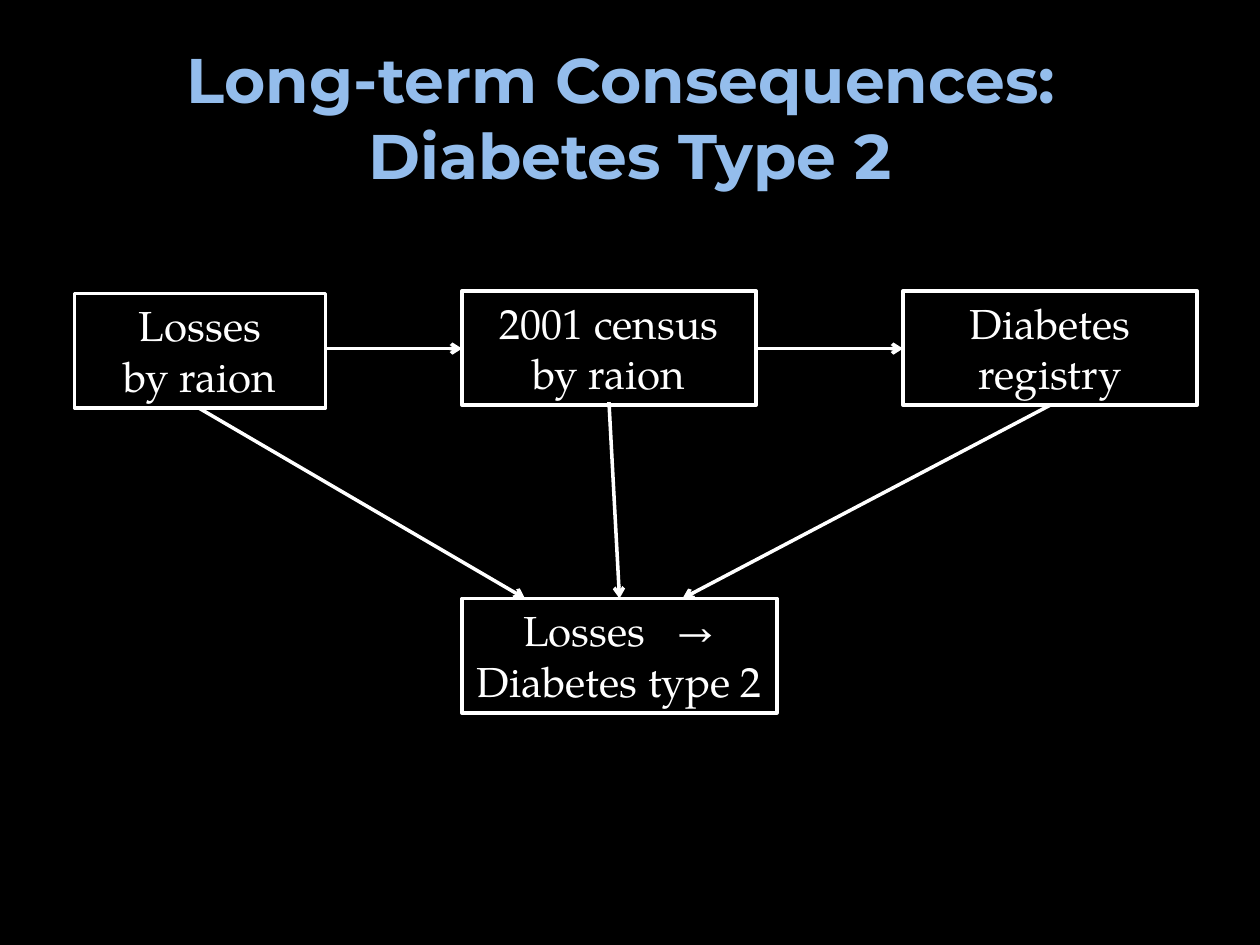
from lxml import etree
from pptx import Presentation
from pptx.dml.color import RGBColor
from pptx.enum.shapes import MSO_CONNECTOR, MSO_SHAPE
from pptx.enum.text import MSO_ANCHOR, PP_ALIGN
from pptx.oxml.ns import qn
from pptx.util import Inches, Pt

RECTANGLE = MSO_SHAPE.RECTANGLE
STRAIGHT = MSO_CONNECTOR.STRAIGHT
CENTER = PP_ALIGN.CENTER
TOP, MIDDLE = MSO_ANCHOR.TOP, MSO_ANCHOR.MIDDLE
TITLE_ONLY = 5
COLUMNS, ROWS = 120, 90
BOX_HEIGHT = 10.9
TOP_ROW, BOTTOM_ROW, ARROW_ROW = 27.7, 57, 33.2
COLORS = {"background": "000000", "title": "94BDEC", "ink": "FFFFFF"}


class DiagramSlide:
    """Draws a titled box-and-arrow diagram on a grid of columns and rows."""

    def __init__(self, deck):
        self.cell_width = deck.slide_width / COLUMNS
        self.cell_height = deck.slide_height / ROWS
        self.page = deck.slides.add_slide(deck.slide_layouts[TITLE_ONLY])
        fill = self.page.background.fill
        fill.solid()
        fill.fore_color.rgb = self.color("background")

    def color(self, name):
        return RGBColor.from_string(COLORS[name])

    def place(self, column, row):
        return round(column * self.cell_width), round(row * self.cell_height)

    def set_text(self, frame, text, font_name, size, color, bold=False):
        frame.text = text
        for paragraph in frame.paragraphs:
            paragraph.alignment = CENTER
            font = paragraph.font
            font.name, font.size, font.bold = font_name, Pt(size), bold
            font.color.rgb = self.color(color)

    def title(self, text, column, row, columns, rows):
        title = self.page.shapes.title
        title.left, title.top = self.place(column, row)
        title.width, title.height = self.place(columns, rows)
        title.text_frame.vertical_anchor = MIDDLE
        self.set_text(title.text_frame, text, "Montserrat", 36, "title", True)

    def box(self, text, column, row, columns):
        box = self.page.shapes.add_shape(
            RECTANGLE, *self.place(column, row), *self.place(columns, BOX_HEIGHT))
        box.shadow.inherit = False
        box.fill.background()
        self.outline(box.line)
        box.text_frame.word_wrap = False
        box.text_frame.vertical_anchor = TOP
        self.set_text(box.text_frame, text, "TeX Gyre Pagella", 24, "ink")

    def arrow(self, start, end):
        arrow = self.page.shapes.add_connector(
            STRAIGHT, *self.place(*start), *self.place(*end))
        self.outline(arrow.line)
        properties = arrow._element.spPr
        line = properties.find(qn("a:ln"))
        etree.SubElement(line, qn("a:tailEnd"), type="arrow")
        etree.SubElement(properties, qn("a:effectLst"))

    def outline(self, line):
        line.color.rgb = self.color("ink")
        line.width = Pt(2)


def main():
    deck = Presentation()
    deck.slide_width, deck.slide_height = Inches(10), Inches(7.5)
    diagram = DiagramSlide(deck)
    diagram.title("Long-term Consequences: \vDiabetes Type 2", 6, 3.6, 108, 15)

    for text, column, row, columns in (
        ("Losses\nby raion", 7.1, TOP_ROW + 0.25, 23.9),
        ("2001 census\nby raion", 44, TOP_ROW, 28),
        ("Diabetes\nregistry", 86, TOP_ROW, 28),
        ("Losses   →\nDiabetes type 2", 44, BOTTOM_ROW, 30),
    ):
        diagram.box(text, column, row, columns)

    for start, end_column in (((19, 38.9), 50), ((58, 38.3), 59), ((100, 38.6), 65)):
        diagram.arrow(start, (end_column, BOTTOM_ROW))
    for start_column, end_column in ((31, 44), (72, 86)):
        diagram.arrow((start_column, ARROW_ROW), (end_column, ARROW_ROW))

    deck.save("out.pptx")


if __name__ == "__main__":
    main()
